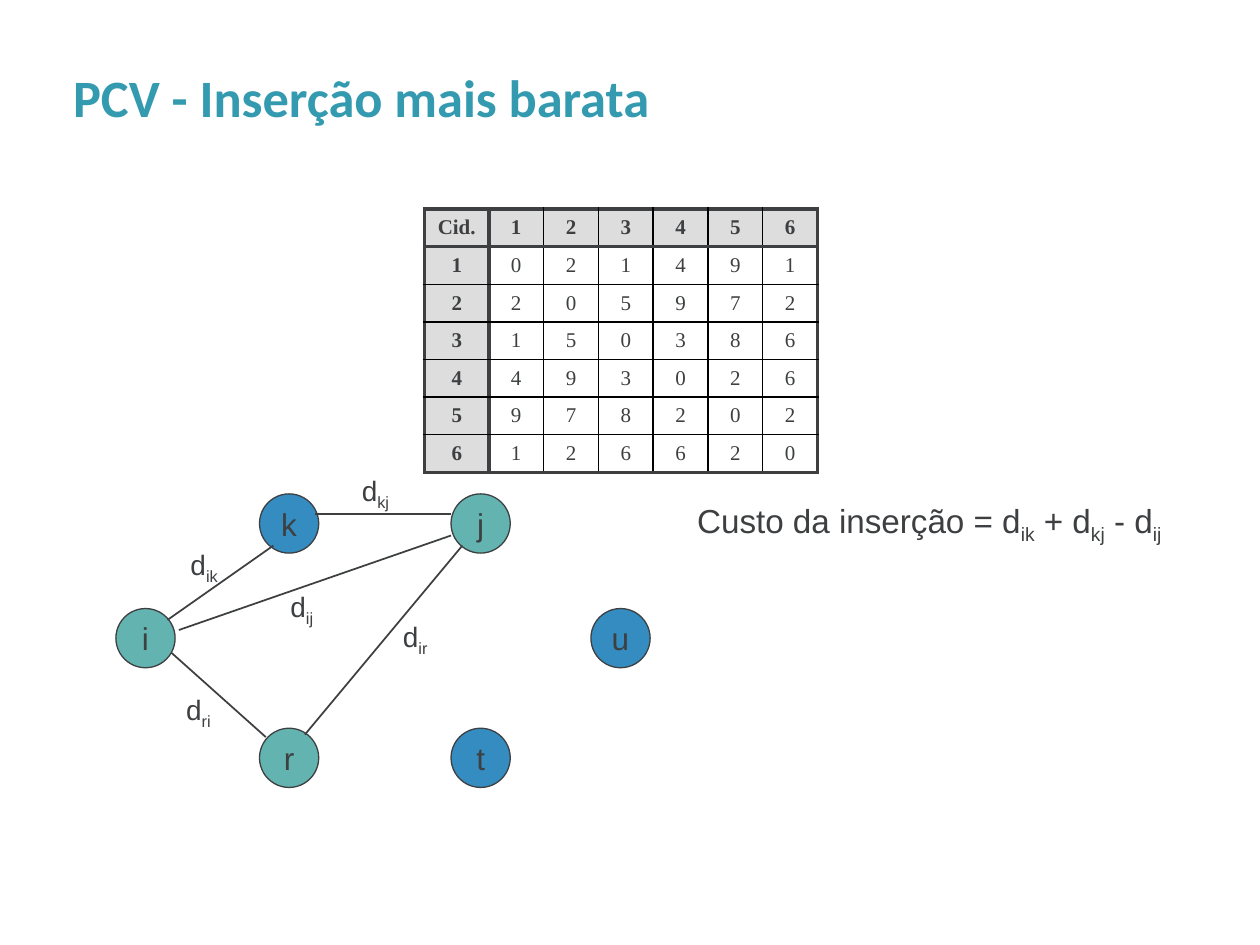
from lxml.etree import SubElement
from pptx import Presentation
from pptx.dml.color import RGBColor
from pptx.enum.shapes import MSO_CONNECTOR, MSO_SHAPE
from pptx.enum.text import MSO_ANCHOR, MSO_AUTO_SIZE, PP_ALIGN
from pptx.oxml.ns import qn
from pptx.util import Inches, Pt

INK = RGBColor(0x3D, 0x3F, 0x41)
BLACK = RGBColor(0x00, 0x00, 0x00)
TEAL = RGBColor(0x33, 0x9A, 0xAF)
FREE = RGBColor(0x35, 0x8C, 0xC1)
VISITED = RGBColor(0x63, 0xB3, 0xB1)
HEADER = RGBColor(0xDD, 0xDD, 0xDD)

DISTANCES = [
    [0, 2, 1, 4, 9, 1],
    [2, 0, 5, 9, 7, 2],
    [1, 5, 0, 3, 8, 6],
    [4, 9, 3, 0, 2, 6],
    [9, 7, 8, 2, 0, 2],
    [1, 2, 6, 6, 2, 0],
]
NODE_SIZE = 0.47
NODES = [
    ("k", 1.14, 0.21, FREE),
    ("t", 2.66, 2.07, FREE),
    ("u", 3.77, 1.12, FREE),
    ("j", 2.66, 0.21, VISITED),
    ("r", 1.14, 2.07, VISITED),
    ("i", 0, 1.12, VISITED),
]
EDGES = [
    ("d[ij]", (1.28, 0.92, 0.39), (0.5, 1.29), (2.66, 0.54)),
    ("d[ir]", (2.17, 1.16, 0.41), (2.75, 0.62), (1.5, 2.12)),
    ("d[ri]", (0.45, 1.74, 0.41), (0.44, 1.47), (1.19, 2.14)),
    ("d[ik]", (0.48, 0.59, 0.44), (0.41, 1.21), (1.25, 0.62)),
    ("d[kj]", (1.84, 0, 0.44), (1.58, 0.37), (2.66, 0.37)),
]


def write(frame, text, size, font="Arial", color=INK, bold=False,
          align=PP_ALIGN.CENTER):
    """Write one paragraph, setting parts in square brackets as subscripts."""
    paragraph = frame.paragraphs[0]
    paragraph.alignment = align
    for index, part in enumerate(text.replace("]", "[").split("[")):
        if not part:
            continue
        run = paragraph.add_run()
        run.text = part
        run.font.name = font
        run.font.size = Pt(size)
        run.font.bold = bold
        run.font.color.rgb = color
        if index % 2:
            run.font._element.set("baseline", "-25000")
    return paragraph


def add_label(slide, text, left, top, width, height, size, wrap=False):
    """Add a text box that grows with its text."""
    label = slide.shapes.add_textbox(
        Inches(left), Inches(top), Inches(width), Inches(height))
    label.text_frame.word_wrap = wrap
    label.text_frame.auto_size = MSO_AUTO_SIZE.SHAPE_TO_FIT_TEXT
    write(label.text_frame, text, size)


def add_title(slide, text, left, top, width, height):
    """Place and format the title placeholder."""
    title = slide.shapes.title
    title.left, title.top = Inches(left), Inches(top)
    title.width, title.height = Inches(width), Inches(height)
    title.text_frame.vertical_anchor = MSO_ANCHOR.BOTTOM
    heading = write(title.text_frame, text, 30, font="Calibri", color=TEAL,
                    bold=True, align=PP_ALIGN.LEFT)
    heading.line_spacing = 0.9


def set_borders(cell, row, column, count):
    """Draw thick lines around the table and its headers, thin ones elsewhere."""
    properties = cell._tc.get_or_add_tcPr()
    sides = (("L", column), ("R", column + 1), ("T", row), ("B", row + 1))
    for side, position in sides:
        thick = position in (0, 1, count)
        line = SubElement(properties, qn(f"a:ln{side}"),
                          w=str(Pt(2.25 if thick else 1)))
        fill = SubElement(line, qn("a:solidFill"))
        SubElement(fill, qn("a:srgbClr"), val=str(INK if thick else BLACK))


def add_distance_table(slide, left, top, width, height):
    """Add the city distance matrix with header row and column."""
    count = len(DISTANCES) + 1
    table = slide.shapes.add_table(
        count, count, Inches(left), Inches(top),
        Inches(width), Inches(height)).table
    table.first_row = table.horz_banding = False
    city_width = 0.51
    for index, column in enumerate(table.columns):
        column.width = Inches(
            (width - city_width) / (count - 1) if index else city_width)
    rows = [["Cid.", *range(1, count)]]
    rows += [[city, *values] for city, values in enumerate(DISTANCES, 1)]
    for r, values in enumerate(rows):
        table.rows[r].height = Inches(height / count)
        for c, value in enumerate(values):
            cell = table.cell(r, c)
            is_header = r == 0 or c == 0
            cell.vertical_anchor = MSO_ANCHOR.MIDDLE
            write(cell.text_frame, str(value), 12, font="Times New Roman",
                  bold=is_header)
            set_borders(cell, r, c, count)
            if is_header:
                cell.fill.solid()
                cell.fill.fore_color.rgb = HEADER
            else:
                cell.fill.background()


def add_node(slide, name, left, top, color):
    """Add one city circle."""
    node = slide.shapes.add_shape(
        MSO_SHAPE.OVAL, Inches(left), Inches(top),
        Inches(NODE_SIZE), Inches(NODE_SIZE))
    node.shadow.inherit = False
    node.fill.solid()
    node.fill.fore_color.rgb = color
    node.line.color.rgb = INK
    node.line.width = Pt(0.75)
    node.text_frame.word_wrap = False
    node.text_frame.vertical_anchor = MSO_ANCHOR.MIDDLE
    write(node.text_frame, name, 18)


def add_edge(slide, x1, y1, x2, y2):
    """Add one straight line between cities."""
    edge = slide.shapes.add_connector(
        MSO_CONNECTOR.STRAIGHT, Inches(x1), Inches(y1),
        Inches(x2), Inches(y2))
    edge.line.color.rgb = INK
    edge.line.width = Pt(1)
    SubElement(edge._element.spPr, qn("a:effectLst"))


def add_graph(slide, left, top):
    """Add the cities, the route edges and their distance labels."""
    for name, x, y, color in NODES:
        add_node(slide, name, left + x, top + y, color)
    for distance, (x, y, width), (x1, y1), (x2, y2) in EDGES:
        add_edge(slide, left + x1, top + y1, left + x2, top + y2)
        add_label(slide, distance, left + x, top + y, width, 0.37, 16)


def main():
    """Build the slide and save it."""
    deck = Presentation()
    deck.slide_width, deck.slide_height = Inches(10), Inches(7.5)
    slide = deck.slides.add_slide(deck.slide_layouts[5])
    add_title(slide, "PCV - Inserção mais barata", 0.48, 0.3, 9.05, 0.77)
    add_distance_table(slide, 3.37, 1.66, 3.12, 2.09)
    add_graph(slide, 0.92, 3.71)
    add_label(slide, "Custo da inserção = d[ik] + d[kj] - d[ij]",
              5.25, 3.92, 4.25, 0.42, 19, wrap=True)
    deck.save("out.pptx")


if __name__ == "__main__":
    main()
